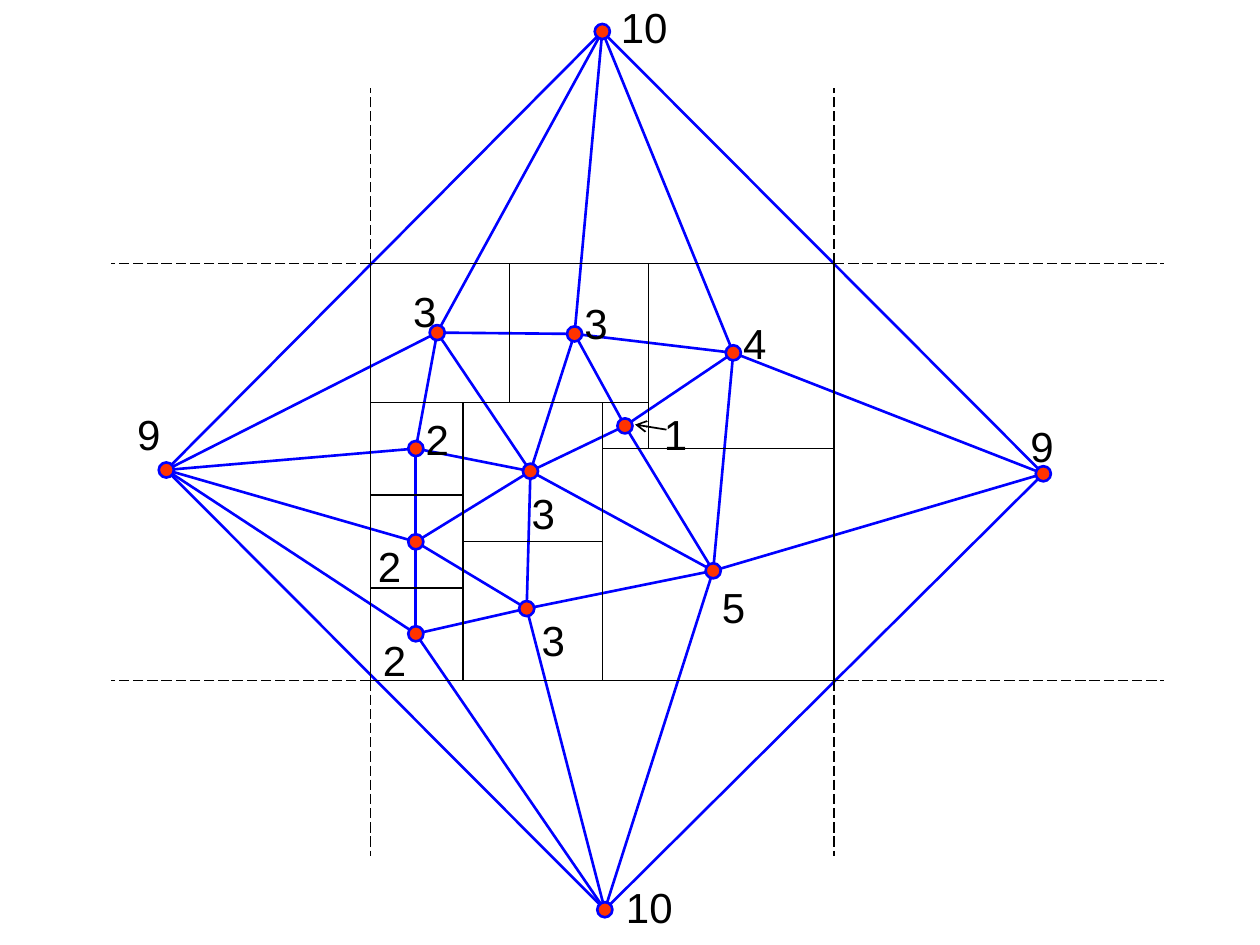
from collections import namedtuple

from lxml import etree
from pptx import Presentation
from pptx.dml.color import RGBColor
from pptx.enum import dml, shapes, text
from pptx.oxml.ns import qn
from pptx.util import Inches, Pt

COLORS = {"edge": "0000FF", "site": "FF3300", "grid": "000000", "label": "000000"}
FONT = {"name": "Arial", "size": Pt(24)}
DOT = 0.12

Box = namedtuple("Box", "left top width height")
Site = namedtuple("Site", "x y label label_x label_y height spacing", defaults=(0.82, 1.8))

# Column, row and side of each square, in modules of a 10 by 9 rectangle
SQUARES = [(0, 0, 3), (3, 0, 3), (6, 0, 4), (5, 4, 5), (5, 3, 1),
           (2, 3, 3), (0, 3, 2), (0, 5, 2), (0, 7, 2), (2, 6, 3)]

# Places are offsets from the top left corner of the rectangle
SITES = {
    "top_left": Site(0.53, 0.55, "3", 0.24, -0.19),
    "top_mid": Site(1.62, 0.56, "3", 1.60, -0.10),
    "top_right": Site(2.88, 0.71, "4", 2.86, 0.06),
    "large": Site(2.72, 2.44, "5", 2.69, 2.16),
    "unit": Site(2.02, 1.29, "1", 2.23, 0.78),
    "centre": Site(1.27, 1.65, "3", 1.18, 1.41),
    "side_1": Site(0.36, 1.47, "2", 0.34, 0.82),
    "side_2": Site(0.36, 2.21, "2", -0.04, 1.83),
    "side_3": Site(0.36, 2.94, "2", 0, 2.58),
    "low_mid": Site(1.24, 2.74, "3", 1.26, 2.42),
    "north": Site(1.84, -1.84, "10", 1.89, -2.08, 0.46, 0.9),
    "south": Site(1.86, 5.13, "10", 1.93, 4.86, 0.5, 1.0),
    "west": Site(-1.62, 1.64, "9", -1.95, 0.78, 0.72),
    "east": Site(5.34, 1.67, "9", 5.14, 0.88, 0.72),
}

# Each edge of the network is listed once
NEIGHBOURS = {
    "north": "west east top_left top_mid top_right",
    "south": "west east large low_mid side_3",
    "west": "top_left side_1 side_2 side_3",
    "east": "top_right large",
    "top_left": "side_1 centre top_mid",
    "top_mid": "centre unit top_right",
    "top_right": "unit large",
    "side_1": "centre side_2",
    "side_2": "centre low_mid side_3",
    "low_mid": "side_3 centre large",
    "centre": "unit large",
    "unit": "large",
}


def set_line(line, color, width):
    line.color.rgb = RGBColor.from_string(COLORS[color])
    line.width = Pt(width)


def add_line(s, start, end, color, width):
    line = s.shapes.add_connector(
        shapes.MSO_CONNECTOR.STRAIGHT, *(Inches(v) for v in (*start, *end)))
    set_line(line.line, color, width)
    etree.SubElement(line._element.spPr, qn("a:effectLst"))
    return line


def add_outline(s, kind, box, color, width, fill=None):
    sp = s.shapes.add_shape(kind, *(Inches(v) for v in box))
    sp.shadow.inherit = False
    set_line(sp.line, color, width)
    if fill:
        sp.fill.solid()
        sp.fill.fore_color.rgb = RGBColor.from_string(COLORS[fill])
    else:
        sp.fill.background()


def add_label(s, box, words, spacing):
    tf = s.shapes.add_textbox(*(Inches(v) for v in box)).text_frame
    tf.word_wrap = False
    tf.auto_size = text.MSO_AUTO_SIZE.SHAPE_TO_FIT_TEXT
    p = tf.paragraphs[0]
    p.line_spacing = spacing
    r = p.add_run()
    r.text = words
    for name, value in FONT.items():
        setattr(r.font, name, value)
    r.font.color.rgb = RGBColor.from_string(COLORS["label"])


def draw_network(s, box):
    def place(name):
        return box.left + SITES[name].x, box.top + SITES[name].y

    for name, others in NEIGHBOURS.items():
        for other in others.split():
            add_line(s, place(name), place(other), "edge", 1.5)
    for name in SITES:
        x, y = place(name)
        dot = Box(x - DOT / 2, y - DOT / 2, DOT, DOT)
        add_outline(s, shapes.MSO_SHAPE.OVAL, dot, "edge", 1.5, "site")


def draw_squares(s, box):
    module = box.width / 10
    for column, row, side in SQUARES:
        square = Box(box.left + column * module, box.top + row * module,
                     side * module, side * module)
        add_outline(s, shapes.MSO_SHAPE.RECTANGLE, square, "grid", 0.75)


def draw_extensions(s, box):
    """Carry the sides of the box outward from its corners as dashed lines."""
    right, bottom = box.left + box.width, box.top + box.height
    for x, dx in ((box.left, -2.06), (right, 2.62)):
        for y, dy in ((box.top, -1.39), (bottom, 1.39)):
            for end in ((x + dx, y), (x, y + dy)):
                line = add_line(s, (x, y), end, "grid", 0.75)
                line.line.dash_style = dml.MSO_LINE.LONG_DASH


def draw_labels(s, box):
    for site in SITES.values():
        width = 0.39 if len(site.label) == 1 else 0.57
        frame = Box(box.left + site.label_x, box.top + site.label_y, width, site.height)
        add_label(s, frame, site.label, site.spacing)
    pointer = add_line(s, (box.left + 2.35, box.top + 1.32),
                       (box.left + 2.1, box.top + 1.28), "grid", 1)
    etree.SubElement(pointer.line._get_or_add_ln(), qn("a:tailEnd"), type="arrow")


def main():
    prs = Presentation()
    prs.slide_width, prs.slide_height = Inches(10), Inches(7.5)
    s = prs.slides.add_slide(prs.slide_layouts[6])
    rectangle = Box(2.94, 2.09, 3.68, 3.31)
    for draw in (draw_network, draw_squares, draw_extensions, draw_labels):
        draw(s, rectangle)
    prs.save("out.pptx")


if __name__ == "__main__":
    main()
